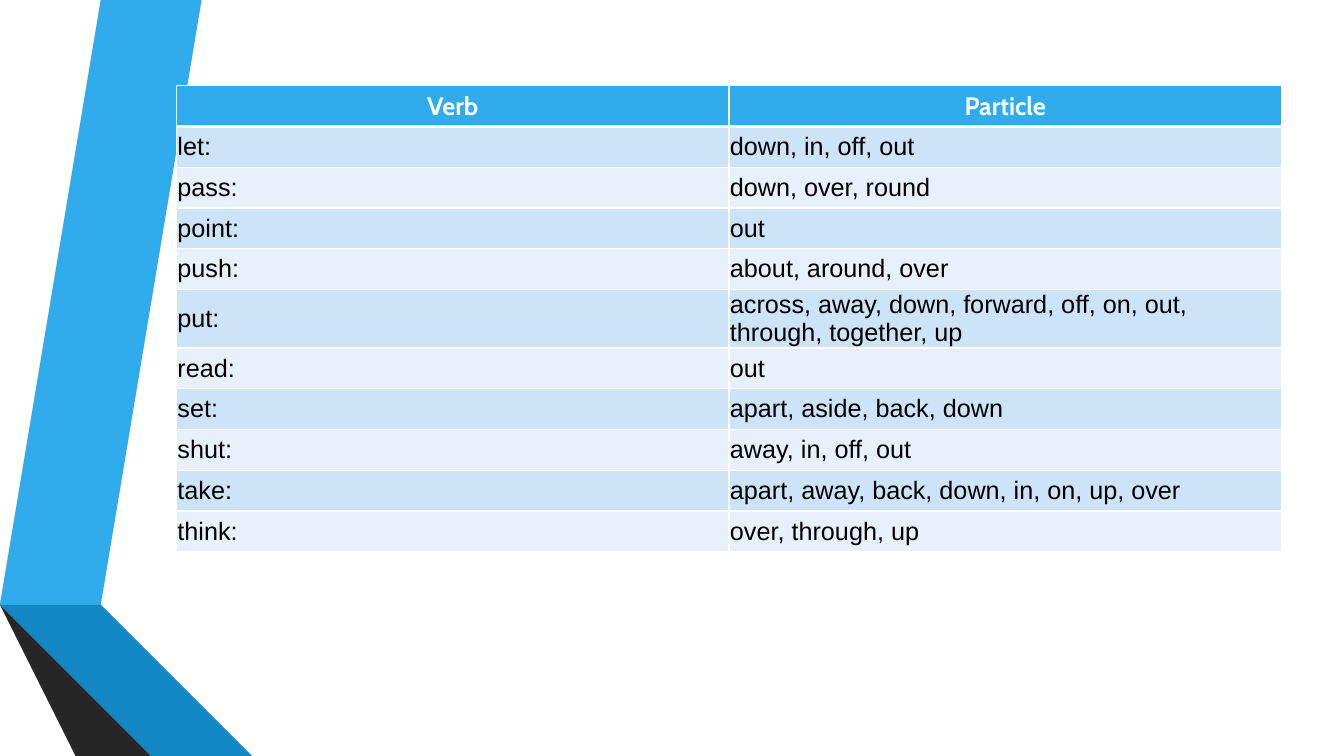
from lxml.etree import SubElement
from pptx import Presentation
from pptx.dml.color import RGBColor
from pptx.enum.text import MSO_ANCHOR, PP_ALIGN
from pptx.oxml.ns import qn
from pptx.util import Inches, Pt

COLORS = {
    "white": "FFFFFF",
    "black": "000000",
    "blue": "30ACEC",
    "deep": "1287C3",
    "navy": "0C5A82",
    "gray": "595959",
    "dark": "404040",
    "coal": "262626",
    "band": "CDE3F8",
    "pale": "E8F1FB",
}

RIBBONS = [
    ("blue", [(0.5, 5.78), (0.77, 5.83), (1.73, 0), (1.45, 0)]),
    ("gray", [(1.39, 0), (1.11, 0), (0.16, 5.73), (0.44, 5.77)]),
    ("coal", [(0.16, 5.73), (1.45, 7.5), (1.51, 7.5)]),
    ("navy", [(0.5, 5.79), (2.08, 7.5), (2.14, 7.5)]),
    ("deep", [(0.5, 5.79), (2.14, 7.5), (2.83, 7.5), (0.77, 5.83), (0.5, 5.78)]),
    ("dark", [(2.02, 7.5), (0.48, 5.83), (0.44, 5.77), (0.16, 5.73), (1.51, 7.5)]),
]

HEADS = ("Verb", "Particle")
VERBS = [
    ("let:", "down, in, off, out"),
    ("pass:", "down, over, round"),
    ("point:", "out"),
    ("push:", "about, around, over"),
    ("put:", "across, away, down, forward, off, on, out, through, together, up"),
    ("read:", "out"),
    ("set:", "apart, aside, back, down"),
    ("shut:", "away, in, off, out"),
    ("take:", "apart, away, back, down, in, on, up, over"),
    ("think:", "over, through, up"),
]


def paint(fill, color):
    fill.solid()
    fill.fore_color.rgb = RGBColor.from_string(COLORS[color])


def add_ribbon(slide, color, points):
    pen = slide.shapes.build_freeform(*points[0], scale=Inches(1))
    pen.add_line_segments(points[1:], close=True)
    shape = pen.convert_to_shape()
    shape.shadow.inherit = False
    paint(shape.fill, color)
    shape.line.fill.background()


def add_border(cell, side, width):
    line = SubElement(cell._tc.get_or_add_tcPr(), qn(f"a:ln{side}"), w=str(Pt(width)))
    fill = SubElement(line, qn("a:solidFill"))
    SubElement(fill, qn("a:srgbClr"), val=COLORS["white"])


def fill_cell(cell, text, font, color, back, head=False, top=1, base=1):
    for side, width in (("L", 1), ("R", 1), ("T", top), ("B", base)):
        add_border(cell, side, width)
    paint(cell.fill, back)
    para = cell.text_frame.paragraphs[0]
    para.alignment = PP_ALIGN.CENTER if head else PP_ALIGN.LEFT
    run = para.add_run()
    run.text = text
    run.font.name = font
    run.font.size = Pt(18)
    run.font.bold = head
    run.font.color.rgb = RGBColor.from_string(COLORS[color])
    if not head:
        cell.vertical_anchor = MSO_ANCHOR.MIDDLE
        cell.margin_left = cell.margin_right = Inches(0.01)
        cell.margin_top = cell.margin_bottom = Inches(0.01)


def add_verbs(slide):
    frame = slide.shapes.add_table(
        len(VERBS) + 1, len(HEADS),
        Inches(1.75), Inches(0.85), Inches(10.96), Inches(4.45),
    )
    table = frame.table
    for col, text in enumerate(HEADS):
        fill_cell(table.cell(0, col), text, "Cabin", "white", "blue", head=True, base=3)
    for row, texts in enumerate(VERBS, 1):
        back = "band" if row % 2 else "pale"
        top = 3 if row == 1 else 1
        for col, text in enumerate(texts):
            fill_cell(table.cell(row, col), text, "Arial", "black", back, top=top)


def main():
    deck = Presentation()
    deck.slide_width = Inches(13.33)
    deck.slide_height = Inches(7.5)
    slide = deck.slides.add_slide(deck.slide_layouts[6])
    paint(slide.background.fill, "white")
    for color, points in RIBBONS:
        add_ribbon(slide, color, points)
    add_verbs(slide)
    deck.save("out.pptx")


if __name__ == "__main__":
    main()
